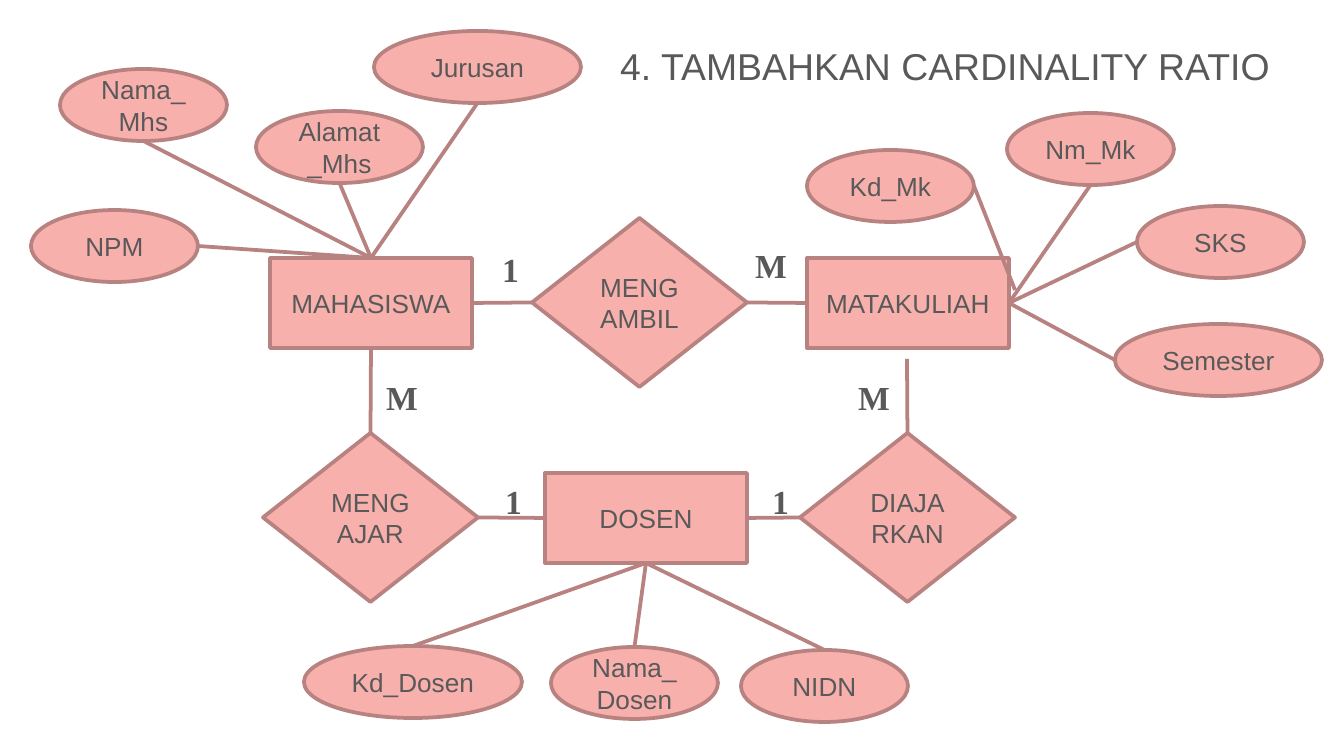
from pptx import Presentation
from pptx.dml.color import RGBColor
from pptx.enum.shapes import MSO_CONNECTOR, MSO_SHAPE
from pptx.enum.text import MSO_ANCHOR, PP_ALIGN
from pptx.oxml.ns import qn
from pptx.util import Pt
from lxml import etree

PX = 914400 / 134.4
PINK = RGBColor(0xF8, 0xB0, 0xAD)
ROSE = RGBColor(0xB7, 0x82, 0x80)
GREY = RGBColor(0x59, 0x59, 0x59)
RECT, DIAMOND, OVAL = MSO_SHAPE.RECTANGLE, MSO_SHAPE.DIAMOND, MSO_SHAPE.OVAL
STRAIGHT = MSO_CONNECTOR.STRAIGHT
MIDDLE, CENTER, LEFT_ALIGN = MSO_ANCHOR.MIDDLE, PP_ALIGN.CENTER, PP_ALIGN.LEFT
TOP, LEFT, BOTTOM, RIGHT = range(4)

TITLE = ("4. TAMBAHKAN CARDINALITY RATIO", 607, 38, 730, 55)
ENTITIES = [("MAHASISWA", 270, 258), ("MATAKULIAH", 807, 258), ("DOSEN", 545, 473)]
RELATIONS = [("MENGAMBIL", 532, 218), ("MENGAJAR", 263, 433), ("DIAJARKAN", 800, 433)]
ATTRIBUTES = [
    ("NPM", 31, 210, 167), ("Nama_Mhs", 60, 69, 167), ("Alamat_Mhs", 256, 111, 167),
    ("Jurusan", 374, 31, 207), ("Kd_Mk", 807, 150, 167), ("Nm_Mk", 1007, 113, 167),
    ("SKS", 1137, 206, 167), ("Semester", 1115, 324, 207), ("Kd_Dosen", 304, 646, 218),
    ("Nama_Dosen", 551, 647, 167), ("NIDN", 741, 650, 167),
]
NODES = (
    [(RECT, name, x, y, 202, 90) for name, x, y in ENTITIES]
    + [(DIAMOND, name, x, y, 215, 169) for name, x, y in RELATIONS]
    + [(OVAL, name, x, y, w, 72) for name, x, y, w in ATTRIBUTES]
)
LINKS = [
    (("MAHASISWA", RIGHT), ("MENGAMBIL", LEFT)),
    (("MENGAMBIL", RIGHT), ("MATAKULIAH", LEFT)),
    (("MAHASISWA", BOTTOM), ("MENGAJAR", TOP)),
    (("MENGAJAR", RIGHT), ("DOSEN", LEFT)),
    (("DOSEN", RIGHT), ("DIAJARKAN", LEFT)),
    ((907, 359), ("DIAJARKAN", TOP)),
    (("NPM", RIGHT), ("MAHASISWA", TOP)),
    (("Nama_Mhs", BOTTOM), ("MAHASISWA", TOP)),
    (("Alamat_Mhs", BOTTOM), ("MAHASISWA", TOP)),
    (("Jurusan", BOTTOM), ("MAHASISWA", TOP)),
    (("Kd_Mk", RIGHT), (1015, 290)),
    (("Nm_Mk", BOTTOM), ("MATAKULIAH", RIGHT)),
    (("SKS", LEFT), ("MATAKULIAH", RIGHT)),
    (("Semester", LEFT), ("MATAKULIAH", RIGHT)),
    (("Kd_Dosen", TOP), ("DOSEN", BOTTOM)),
    (("Nama_Dosen", TOP), ("DOSEN", BOTTOM)),
    (("NIDN", TOP), ("DOSEN", BOTTOM)),
]
CARDINALITIES = [("1", 489, 242), ("M", 742, 238), ("M", 845, 370),
                 ("1", 759, 474), ("1", 492, 474), ("M", 373, 370)]


def emu(*lengths):
    return [round(v * PX) for v in lengths]


def write(sp, text, size, font="Arial", bold=False, align=LEFT_ALIGN):
    tf = sp.text_frame
    tf.word_wrap = True
    tf.text = text
    p = tf.paragraphs[0]
    p.alignment = align
    r = p.runs[0]
    r.font.size, r.font.name, r.font.bold = Pt(size), font, bold
    r.font.color.rgb = GREY
    return tf


def outline(sp):
    sp.line.color.rgb = ROSE
    sp.line.width = Pt(2)


def add_node(s, kind, name, *box):
    sp = s.shapes.add_shape(kind, *emu(*box))
    sp.shadow.inherit = False
    sp.fill.solid()
    sp.fill.fore_color.rgb = PINK
    outline(sp)
    write(sp, name, 14, align=CENTER).vertical_anchor = MIDDLE
    return sp


def locate(end, nodes):
    if end[0] not in nodes:
        return emu(*end)
    sp, side = nodes[end[0]], end[1]
    dx, dy = [(0.5, 0), (0, 0.5), (0.5, 1), (1, 0.5)][side]
    return [round(sp.left + dx * sp.width), round(sp.top + dy * sp.height)]


def add_link(s, start, end, nodes):
    line = s.shapes.add_connector(STRAIGHT, *locate(start, nodes), *locate(end, nodes))
    for (name, side), join in ((start, line.begin_connect), (end, line.end_connect)):
        if name in nodes and nodes[name].auto_shape_type != OVAL:
            join(nodes[name], side)
    outline(line)
    etree.SubElement(line._element.spPr, qn("a:effectLst"))


def main():
    prs = Presentation()
    prs.slide_width, prs.slide_height = emu(1344, 756)
    s = prs.slides.add_slide(prs.slide_layouts[6])
    text, *box = TITLE
    write(s.shapes.add_textbox(*emu(*box)), text, 20).vertical_anchor = MIDDLE
    nodes = {node[1]: add_node(s, *node) for node in NODES}
    for start, end in LINKS:
        add_link(s, start, end, nodes)
    for text, x, y in CARDINALITIES:
        write(s.shapes.add_textbox(*emu(x, y, 45, 54)), text, 18, "Times New Roman", True)
    prs.save("out.pptx")


if __name__ == "__main__":
    main()
